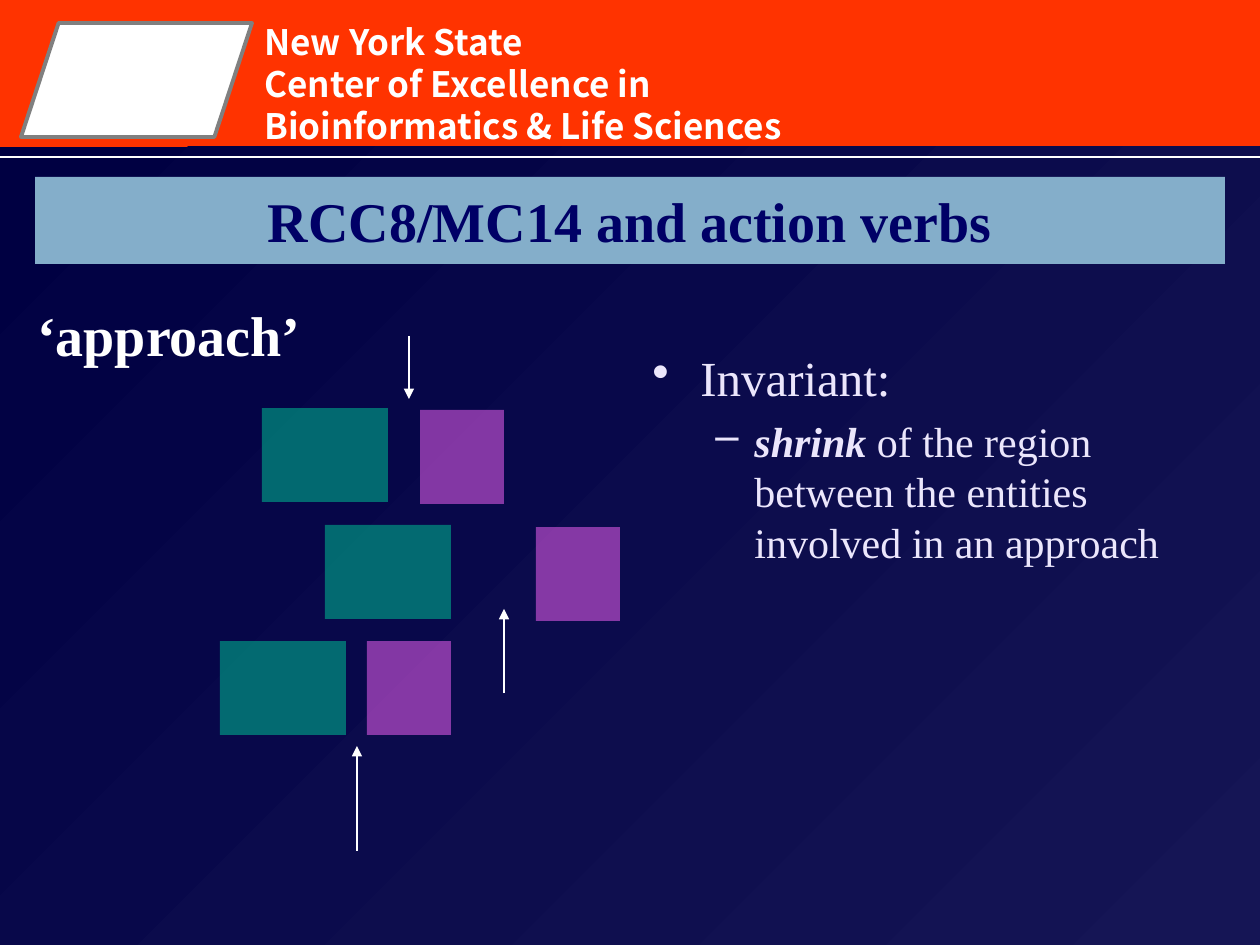
from lxml import etree
from pptx import Presentation
from pptx import util as u
from pptx.dml.color import RGBColor
from pptx.enum import shapes, text
from pptx.oxml.ns import qn

SCALE = 914400 / 126
WHITE = RGBColor(0xFF, 0xFF, 0xFF)
ORANGE = RGBColor(0xFF, 0x33, 0x00)
NIGHT = RGBColor(0x00, 0x00, 0x42)
INDIGO = RGBColor(0x15, 0x15, 0x55)
STEEL = RGBColor(0x84, 0xAE, 0xCA)
NAVY = RGBColor(0x00, 0x00, 0x66)
LILAC = RGBColor(0xEB, 0xE6, 0xFC)
PINK = RGBColor(0xFF, 0x66, 0xFF)
GREEN = RGBColor(0x00, 0xCC, 0x99)
GRAY = RGBColor(0x80, 0x80, 0x80)
SERIF = "Times New Roman"


def px(*lengths):
    return [u.Emu(round(length * SCALE)) for length in lengths]


def write(paragraph, words, color, **style):
    run = paragraph.add_run()
    run.text = words
    run.font.color.rgb = color
    for key, value in style.items():
        setattr(run.font, key, value)


deck = Presentation()
deck.slide_width, deck.slide_height = px(1260, 945)
slide = deck.slides.add_slide(deck.slide_layouts[5])
slide.background.fill.solid()
slide.background.fill.fore_color.rgb = ORANGE
parts = slide.shapes

backdrop = parts.add_shape(shapes.MSO_SHAPE.RECTANGLE, *px(0, 147, 1260, 798))
backdrop.shadow.inherit = False
backdrop.line.fill.background()
backdrop.fill.gradient()
backdrop.fill.gradient_angle = 315
for stop, color, position in zip(backdrop.fill.gradient_stops, (NIGHT, INDIGO), (0, 1)):
    stop.color.rgb = color
    stop.position = position

emblem = parts.add_shape(shapes.MSO_SHAPE.PARALLELOGRAM, *px(21, 23, 231, 114))
emblem.shadow.inherit = False
emblem.adjustments[0] = 0.33
emblem.fill.solid()
emblem.fill.fore_color.rgb = WHITE
emblem.line.color.rgb = GRAY
emblem.line.width = u.Pt(2.25)

center = parts.add_textbox(*px(252, 10, 577, 155)).text_frame
center.word_wrap = True
center.margin_top = px(10)[0]
for index, words in enumerate(
    ("New York State", "Center of Excellence in Bioinformatics & Life Sciences")
):
    paragraph = center.add_paragraph() if index else center.paragraphs[0]
    paragraph.line_spacing = u.Pt(24)
    write(paragraph, words, WHITE, name="Noto Sans CJK KR", size=u.Pt(20), bold=True)

title = parts.title
title.left, title.top, title.width, title.height = px(35, 177, 1190, 87)
title.fill.solid()
title.fill.fore_color.rgb = STEEL
title.text_frame.vertical_anchor = text.MSO_ANCHOR.MIDDLE
heading = title.text_frame.paragraphs[0]
heading.alignment = text.PP_ALIGN.CENTER
write(heading, "RCC8/MC14 and action verbs", NAVY, name=SERIF, size=u.Pt(32), bold=True)
parts._spTree.append(title._element)

invariant = parts.add_textbox(*px(640, 336, 599, 588)).text_frame
invariant.word_wrap = True
invariant.margin_top = px(12)[0]
points = [
    (0, "•", 48, -48, 28, [("Invariant:", False)]),
    (1, "–", 102, -39, 24, [
        ("shrink", True),
        (" of the region between the entities involved in an approach", False),
    ]),
]
for level, bullet, margin, indent, size, runs in points:
    paragraph = invariant.add_paragraph() if level else invariant.paragraphs[0]
    paragraph.level = level
    properties = paragraph._p.get_or_add_pPr()
    for key, length in {"marL": margin, "indent": indent}.items():
        properties.set(key, str(px(length)[0]))
    etree.SubElement(properties, qn("a:buChar"), char=bullet)
    if level:
        paragraph.space_before = u.Pt(5)
    for words, strong in runs:
        write(paragraph, words, LILAC, name=SERIF, size=u.Pt(size), bold=strong, italic=strong)

verb = parts.add_textbox(*px(24, 294, 290, 79)).text_frame
verb.word_wrap = False
verb.paragraphs[0].alignment = text.PP_ALIGN.CENTER
write(verb.paragraphs[0], "‘approach’", WHITE, name=SERIF, size=u.Pt(32), bold=True)

for pink_left, pink_top, green_left, green_top in (
    (420, 410, 262, 408),
    (536, 527, 325, 525),
    (367, 641, 220, 641),
):
    for left, top, width, color in (
        (pink_left, pink_top, 84, PINK),
        (green_left, green_top, 126, GREEN),
    ):
        entity = parts.add_shape(shapes.MSO_SHAPE.RECTANGLE, *px(left, top, width, 94))
        entity.shadow.inherit = False
        entity.line.fill.background()
        entity.fill.solid()
        entity.fill.fore_color.rgb = color
        tint = entity._element.spPr.find(qn("a:solidFill"))[0]
        etree.SubElement(tint, qn("a:alpha"), val="50000")

for x1, y1, x2, y2, arrow in (
    (0, 157, 1260, 157, False),
    (409, 336, 409, 399, True),
    (504, 693, 504, 609, True),
    (357, 851, 357, 746, True),
):
    stroke = parts.add_connector(shapes.MSO_CONNECTOR.STRAIGHT, *px(x1, y1, x2, y2))
    stroke.line.color.rgb = WHITE
    stroke.line.width = u.Pt(0.75)
    if arrow:
        etree.SubElement(stroke.line._get_or_add_ln(), qn("a:tailEnd"), type="triangle")
    etree.SubElement(stroke._element.spPr, qn("a:effectLst"))

deck.save("out.pptx")
